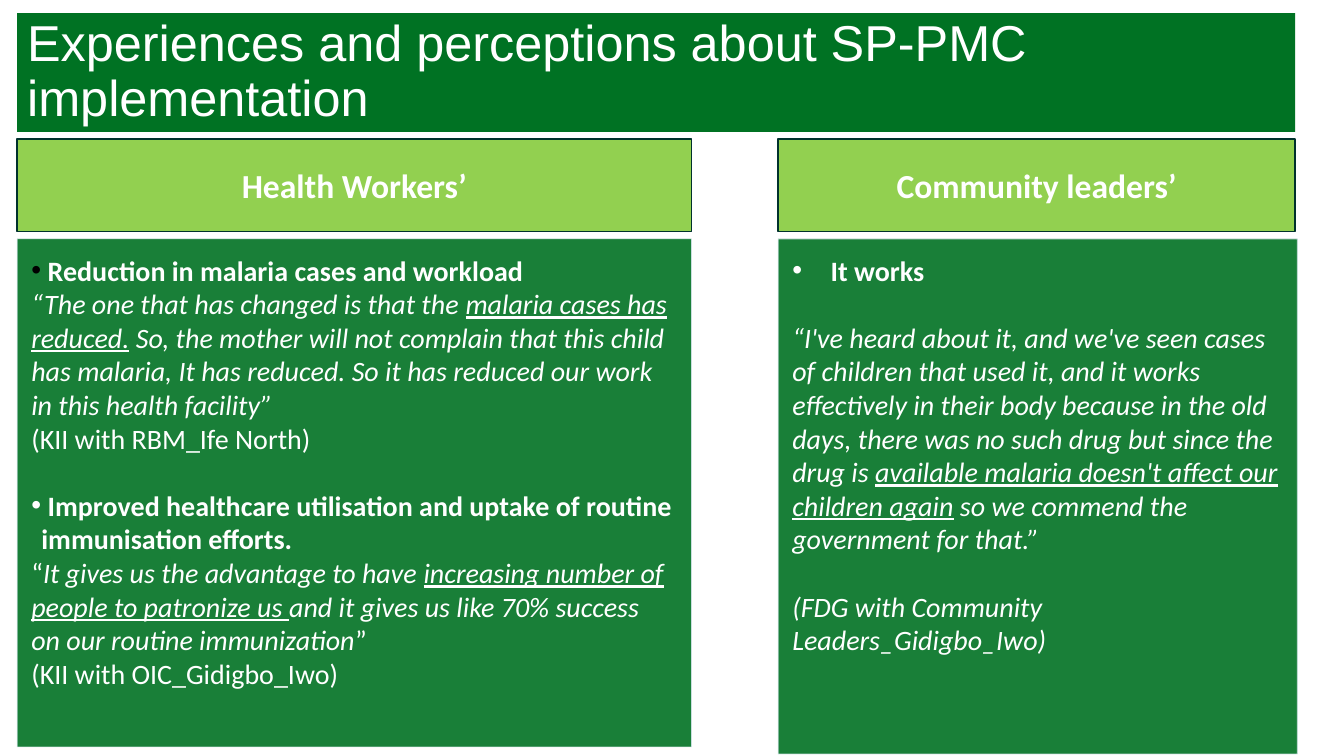
from dataclasses import dataclass

from lxml.etree import SubElement
from pptx import Presentation
from pptx.dml.color import RGBColor
from pptx.enum.shapes import MSO_SHAPE as Shp
from pptx.enum.text import MSO_ANCHOR as Anchor, PP_ALIGN as Align
from pptx.oxml.ns import qn
from pptx.shapes.autoshape import Shape
from pptx.text.text import TextFrame, _Paragraph as Paragraph
from pptx.util import Pt

COLORS = {
    "green": "007223",
    "lime": "92D050",
    "dark": "00322D",
    "pale": "CDE0E4",
    "white": "FFFFFF",
    "black": "000000",
}
LEFT, RIGHT = 12.24, 555.84
HEAD_TOP, HEAD_HEIGHT = 99.36, 66.24
BODY_TOP = 170.64
BODY_SIZE, BLANK_LINE = 20, 24
BODY_INSETS = (10.08, 10.08, 13.68, 15.12)


@dataclass(frozen=True)
class Run:
    text: str
    style: str = ""  # any of b, i, u
    size: float = BODY_SIZE
    color: str = "white"
    font: str = "Calibri"


@dataclass(frozen=True)
class Para:
    runs: tuple[Run, ...]
    bullet_indent: float = 0
    before: float = 0


@dataclass(frozen=True)
class Column:
    heading: str
    left: float
    head_width: float
    body_width: float
    body_height: float
    paras: tuple[Para, ...]


COLUMNS = (
    Column("Health Workers’", LEFT, 481.68, 481.68, 362.88, (
        Para((Run(" ", "b", color="black"),
              Run("Reduction in malaria cases and workload", "b")), 7.2),
        Para((Run("“The one that has changed is that the ", "i"),
              Run("malaria cases has reduced.", "iu"),
              Run(" So, the mother will not complain that this child has malaria, "
                  "It has reduced. So it has reduced our work in this health "
                  "facility”", "i"))),
        Para((Run("(KII with RBM_Ife North)"),)),
        Para((Run(" "),
              Run("Improved healthcare utilisation and uptake of routine "
                  "immunisation efforts.", "b")), 7.2, BLANK_LINE),
        Para((Run("“"),
              Run("It gives us the advantage to have ", "i"),
              Run("increasing number of people to patronize us ", "iu"),
              Run("and it gives us like 70% success on our routine immunization", "i"),
              Run("”"))),
        Para((Run("(KII with OIC_Gidigbo_Iwo)"),)),
    )),
    Column("Community leaders’", RIGHT, 369.36, 370.8, 367.92, (
        Para((Run("It works", "b"),), 27.36),
        Para((Run("“I've heard about it, and we've seen cases of children that used "
                  "it, and it works effectively in their body because in the old "
                  "days, there was no such drug but since the drug is ", "i"),
              Run("available malaria doesn't affect our children again", "iu"),
              Run(" so we commend the government for that.”", "i")),
             before=BLANK_LINE),
        Para((Run("(FDG with Community Leaders_Gidigbo_Iwo)", "i"),),
             before=BLANK_LINE),
    )),
)


def rgb(name: str) -> RGBColor:
    return RGBColor.from_string(COLORS[name])


def add_box(slide, left: float, top: float, width: float, height: float, fill: str,
            line: str = "", line_width: float = 1) -> Shape:
    """Add a flat rectangle; an empty line name means no outline."""
    s = slide.shapes.add_shape(Shp.RECTANGLE, Pt(left), Pt(top), Pt(width), Pt(height))
    s.shadow.inherit = False
    s.fill.solid()
    s.fill.fore_color.rgb = rgb(fill)
    if line:
        s.line.color.rgb = rgb(line)
        s.line.width = Pt(line_width)
    else:
        s.line.fill.background()
    s.text_frame.word_wrap = True
    return s


def set_opacity(s: Shape, percent: int) -> None:
    """Apply one opacity to the fill and the outline."""
    for color in s._element.spPr.iter(qn("a:srgbClr")):
        SubElement(color, qn("a:alpha"), val=str(percent * 1000))


def add_run(p: Paragraph, run: Run) -> None:
    r = p.add_run()
    r.text = run.text
    f = r.font
    f.name, f.size = run.font, Pt(run.size)
    f.color.rgb = rgb(run.color)
    f.bold, f.italic, f.underline = (mark in run.style for mark in "biu")


def add_bullet(p: Paragraph, indent: float) -> None:
    """Hang a round bullet in front of the paragraph."""
    pPr = p._p.get_or_add_pPr()
    pPr.set("marL", str(Pt(indent)))
    pPr.set("indent", str(-Pt(indent)))
    SubElement(pPr, qn("a:buFont"), typeface="Arial")
    SubElement(pPr, qn("a:buChar"), char="•")


def write_paras(tf: TextFrame, paras: tuple[Para, ...]) -> None:
    for i, para in enumerate(paras):
        p = tf.add_paragraph() if i else tf.paragraphs[0]
        p.alignment = Align.LEFT
        p.space_before = Pt(para.before)
        if para.bullet_indent:
            add_bullet(p, para.bullet_indent)
        for run in para.runs:
            add_run(p, run)


def add_title(slide) -> None:
    s = add_box(slide, LEFT, 9.36, 912.96, 84.96, "green")
    tf = s.text_frame
    tf.vertical_anchor = Anchor.MIDDLE
    p = tf.paragraphs[0]
    p.alignment = Align.LEFT
    p.line_spacing = 0.9
    p.space_after = Pt(8)
    add_run(p, Run("Experiences and perceptions about SP-PMC implementation",
                   size=36, font="Arial"))


def add_column(slide, col: Column) -> None:
    head = add_box(slide, col.left, HEAD_TOP, col.head_width, HEAD_HEIGHT, "lime", "dark")
    head.text_frame.vertical_anchor = Anchor.MIDDLE
    p = head.text_frame.paragraphs[0]
    p.alignment = Align.CENTER
    add_run(p, Run(col.heading, "b", size=24))

    body = add_box(slide, col.left, BODY_TOP, col.body_width, col.body_height,
                   "green", "pale", 0.5)
    set_opacity(body, 90)
    tf = body.text_frame
    tf.vertical_anchor = Anchor.TOP
    tf.margin_left, tf.margin_top, tf.margin_right, tf.margin_bottom = map(Pt, BODY_INSETS)
    write_paras(tf, col.paras)


def main() -> None:
    prs = Presentation()
    prs.slide_width, prs.slide_height = Pt(960), Pt(540)
    slide = prs.slides.add_slide(prs.slide_layouts[6])
    for col in COLUMNS:
        add_column(slide, col)
    add_title(slide)
    prs.save("out.pptx")


if __name__ == "__main__":
    main()
